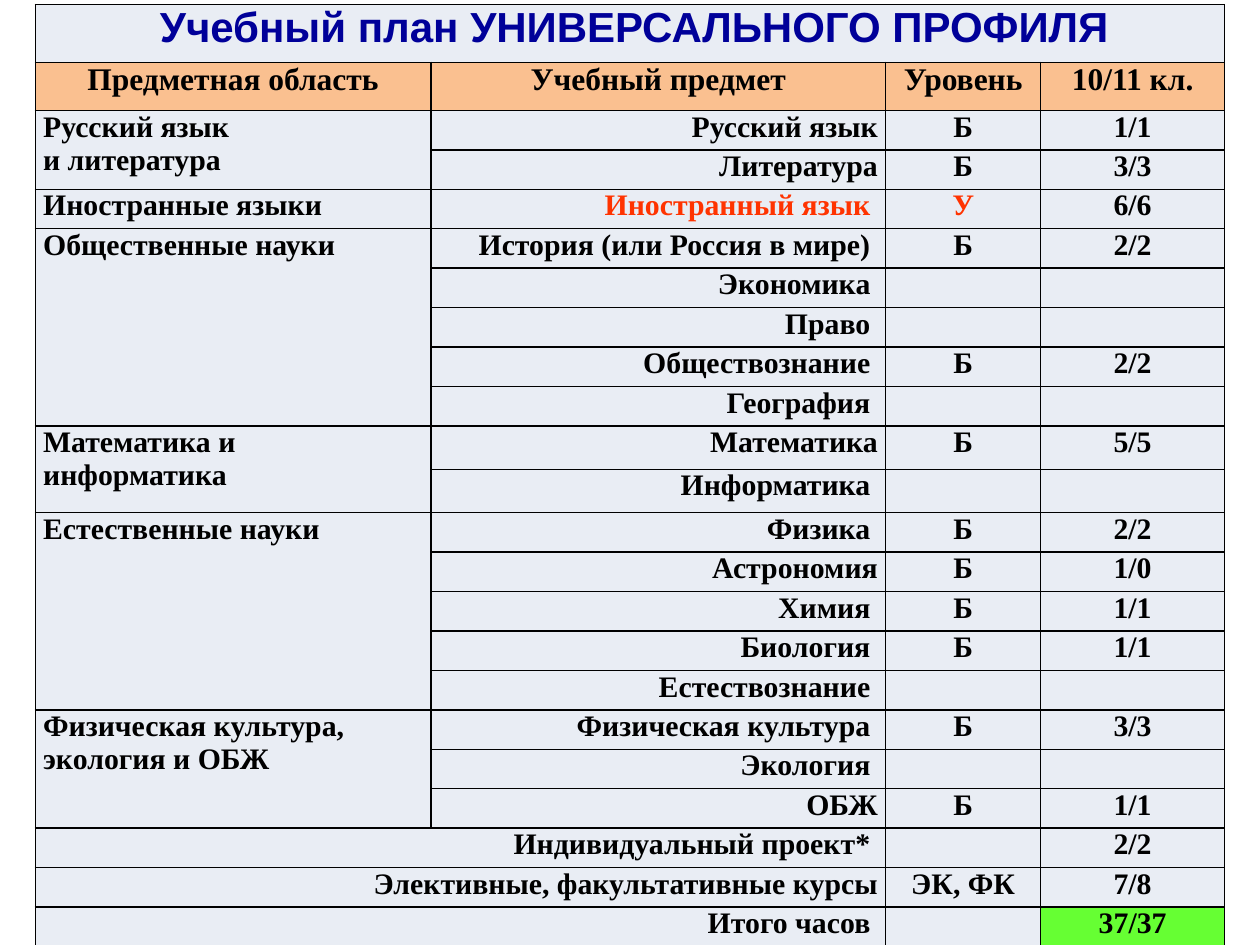
from lxml import etree
from pptx import Presentation
from pptx.dml.color import RGBColor
from pptx.enum.text import PP_ALIGN
from pptx.oxml.ns import qn
from pptx.util import Inches, Pt

LEFT, CENTER, RIGHT = PP_ALIGN.LEFT, PP_ALIGN.CENTER, PP_ALIGN.RIGHT
BLACK = RGBColor(0x00, 0x00, 0x00)
NAVY = RGBColor(0x00, 0x00, 0x99)
RED = RGBColor(0xFF, 0x33, 0x00)
PALE = RGBColor(0xE9, 0xED, 0xF4)
PEACH = RGBColor(0xFA, 0xC0, 0x90)
GREEN = RGBColor(0x66, 0xFF, 0x33)

TITLE = "Учебный план УНИВЕРСАЛЬНОГО ПРОФИЛЯ"
HEADER = ["Предметная область", "Учебный предмет", "Уровень", "10/11 кл."]
# Subject area -> (subject, level, hours)
AREAS = [
    ("Русский язык\nи литература", [
        ("Русский язык", "Б", "1/1"),
        ("Литература", "Б", "3/3")]),
    ("Иностранные языки", [
        ("Иностранный язык ", "У", "6/6")]),
    ("Общественные науки", [
        ("История (или Россия в мире) ", "Б", "2/2"),
        ("Экономика ", "", ""),
        ("Право ", "", ""),
        ("Обществознание ", "Б", "2/2"),
        ("География ", "", "")]),
    ("Математика и информатика", [
        ("Математика", "Б", "5/5"),
        ("Информатика ", "", "")]),
    ("Естественные науки", [
        ("Физика ", "Б", "2/2"),
        ("Астрономия", "Б", "1/0"),
        ("Химия ", "Б", "1/1"),
        ("Биология ", "Б", "1/1"),
        ("Естествознание ", "", "")]),
    ("Физическая культура, экология и ОБЖ", [
        ("Физическая культура ", "Б", "3/3"),
        ("Экология ", "", ""),
        ("ОБЖ", "Б", "1/1")]),
]
TOTALS = [
    ("Индивидуальный проект* ", "", "2/2"),
    ("Элективные, факультативные курсы", "ЭК, ФК", "7/8"),
    ("Итого часов ", "", "37/37"),
]
COL_WEIGHTS = [3.14, 3.61, 1.23, 1.46]
TITLE_ROW, HEADER_ROW, MATH_ROW, PLAIN_ROW = 1.46, 1.22, 1.1, 1


def add_run(p, text, font="Times New Roman", size=17, color=BLACK):
    r = p.add_run()
    r.text = text
    r.font.name, r.font.size, r.font.bold = font, Pt(size), True
    r.font.color.rgb = color


def write(tf, text, align=LEFT, **style):
    """Fill a text frame, one paragraph per line of text."""
    for i, line in enumerate(text.split("\n")):
        p = tf.add_paragraph() if i else tf.paragraphs[0]
        p.alignment = align
        if line:
            add_run(p, line, **style)


class CurriculumSlide:
    """Current slide with its table style; lengths are shares of the slide."""

    border, inset = Pt(1), Pt(4.5)

    def __init__(self, prs):
        self.width, self.height = prs.slide_width, prs.slide_height
        self.s = prs.slides.add_slide(prs.slide_layouts[6])

    def add_table(self, x, y, w, h, col_weights, row_weights):
        """Add a table whose columns and rows share its size by weight."""
        box = (int(x * self.width), int(y * self.height),
               int(w * self.width), int(h * self.height))
        self.table = self.s.shapes.add_table(
            len(row_weights), len(col_weights), *box).table
        self.table.first_row = self.table.horz_banding = False
        for col, weight in zip(self.table.columns, col_weights):
            col.width = int(box[2] * weight / sum(col_weights))
        for row, weight in zip(self.table.rows, row_weights):
            row.height = int(box[3] * weight / sum(row_weights))
        for cell in self.table.iter_cells():
            self.style_cell(cell)

    def style_cell(self, cell):
        cell.margin_left = cell.margin_right = self.inset
        cell.margin_top = cell.margin_bottom = 0
        tc_pr = cell._tc.get_or_add_tcPr()
        for side in ("a:lnL", "a:lnR", "a:lnT", "a:lnB"):
            ln = etree.SubElement(tc_pr, qn(side), w=str(self.border))
            fill = etree.SubElement(ln, qn("a:solidFill"))
            etree.SubElement(fill, qn("a:srgbClr"), val=str(BLACK))
        self.fill_cell(cell, PALE)

    def fill_cell(self, cell, color):
        cell.fill.solid()
        cell.fill.fore_color.rgb = color

    def cell(self, row, col, text, rows=1, cols=1, fill=PALE, **style):
        """Write one cell, merged over the given rows and columns."""
        cell = self.table.cell(row, col)
        if rows * cols > 1:
            cell.merge(self.table.cell(row + rows - 1, col + cols - 1))
        self.fill_cell(cell, fill)
        write(cell.text_frame, text, **style)
        return cell


def main():
    prs = Presentation()
    prs.slide_width, prs.slide_height = Inches(10), Inches(7.5)
    slide = CurriculumSlide(prs)

    weights = [TITLE_ROW, HEADER_ROW]
    for area, subjects in AREAS:
        height = MATH_ROW if area.startswith("Математика") else PLAIN_ROW
        weights += [height] * len(subjects)
    weights += [PLAIN_ROW] * len(TOTALS)
    slide.add_table(0.028, 0.005, 0.944, 0.997, COL_WEIGHTS, weights)

    title = slide.cell(0, 0, "", cols=4, align=CENTER)
    p = title.text_frame.paragraphs[0]
    for text, size in ((" ", 18), (TITLE, 24)):
        add_run(p, text, font="Arial", size=size, color=NAVY)
    for col, text in enumerate(HEADER):
        slide.cell(1, col, text, fill=PEACH, align=CENTER, size=18)

    row = 2
    for area, subjects in AREAS:
        slide.cell(row, 0, area, rows=len(subjects))
        for subject, level, hours in subjects:
            color = RED if level == "У" else BLACK
            slide.cell(row, 1, subject, align=RIGHT, color=color)
            slide.cell(row, 2, level, align=CENTER, color=color)
            slide.cell(row, 3, hours, align=CENTER)
            row += 1
    for row, (label, level, hours) in enumerate(TOTALS, row):
        last = row == len(weights) - 1
        slide.cell(row, 0, label, cols=2, align=RIGHT)
        slide.cell(row, 2, level, align=CENTER)
        slide.cell(row, 3, hours, fill=GREEN if last else PALE, align=CENTER)

    prs.save("out.pptx")


if __name__ == "__main__":
    main()
